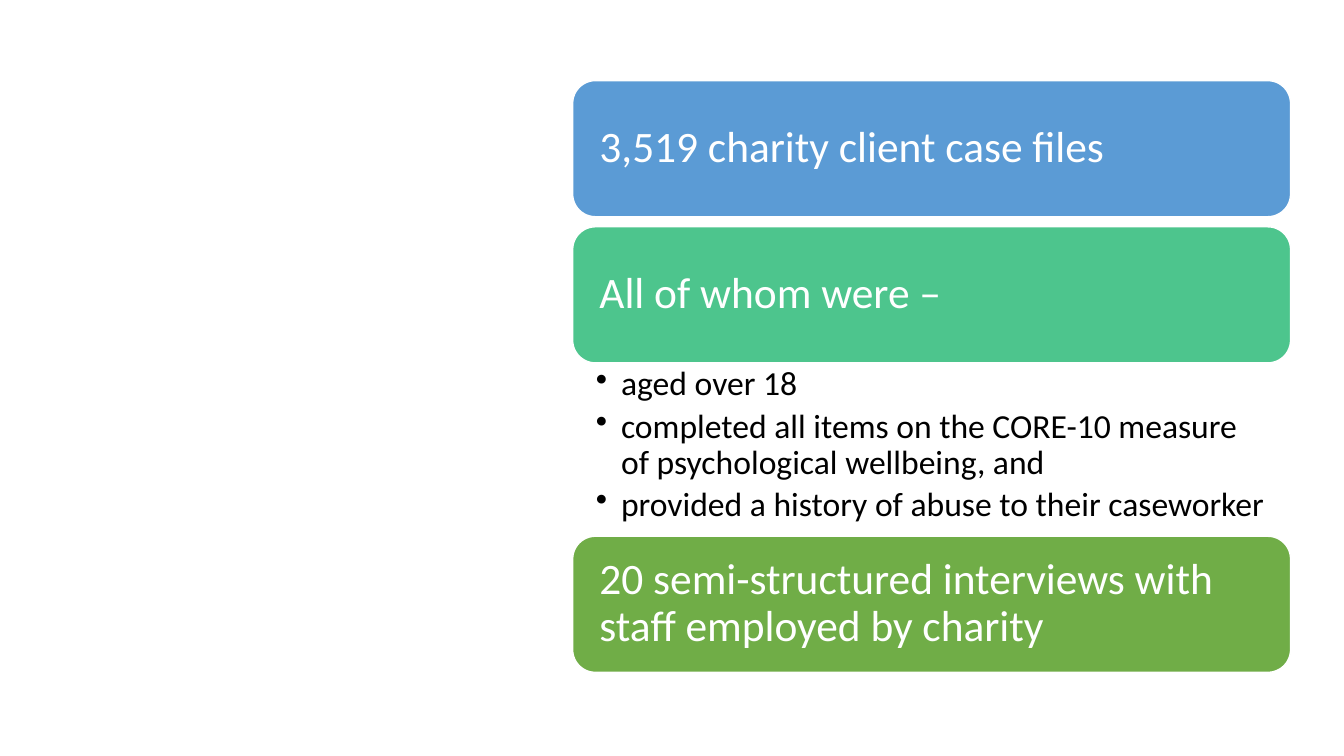
from dataclasses import dataclass

from lxml.etree import SubElement
from pptx import Presentation
from pptx.dml.color import RGBColor
from pptx.enum.shapes import MSO_SHAPE
from pptx.enum.text import MSO_ANCHOR, PP_ALIGN
from pptx.oxml.ns import qn
from pptx.slide import Slide
from pptx.text.text import TextFrame
from pptx.util import Inches, Pt


@dataclass(frozen=True)
class Theme:
    font: str = "Calibri"
    heading_size: float = 31
    bullet_size: float = 24
    white: str = "FFFFFF"
    black: str = "000000"
    blue: str = "5B9BD5"
    teal: str = "4DC58D"
    green: str = "70AD47"


@dataclass(frozen=True)
class Panel:
    text: str
    top: float
    fill: str


THEME = Theme()

# Column geometry, in inches
LEFT, WIDTH = 5.68, 7.12
PANEL_HEIGHT, BULLETS_HEIGHT = 1.35, 1.72
FIRST_TOP, PANEL_GAP = 0.8, 0.1
SECOND_TOP = FIRST_TOP + PANEL_HEIGHT + PANEL_GAP
BULLETS_TOP = SECOND_TOP + PANEL_HEIGHT
THIRD_TOP = BULLETS_TOP + BULLETS_HEIGHT

PANELS = [
    Panel("3,519 charity client case files", FIRST_TOP, THEME.blue),
    Panel("All of whom were –", SECOND_TOP, THEME.teal),
    Panel("20 semi-structured interviews with staff employed by charity", THIRD_TOP, THEME.green),
]
CRITERIA = [
    "aged over 18",
    "completed all items on the CORE-10 measure of psychological wellbeing, and",
    "provided a history of abuse to their caseworker",
]


def set_margins(frame: TextFrame, left: float, right: float, vertical: float) -> None:
    frame.word_wrap = True
    frame.margin_left, frame.margin_right = Inches(left), Inches(right)
    frame.margin_top = frame.margin_bottom = Inches(vertical)


def write_paragraph(frame: TextFrame, text: str, *, size: float, color: str,
                    first: bool = True, bullet: bool = False, space_after: float = 0) -> None:
    para = frame.paragraphs[0] if first else frame.add_paragraph()
    para.alignment = PP_ALIGN.LEFT
    para.line_spacing = 0.9
    para.space_after = Pt(space_after)
    if bullet:
        properties = para._p.get_or_add_pPr()
        properties.set("marL", str(Inches(0.25)))
        properties.set("indent", str(-Inches(0.25)))
        SubElement(properties, qn("a:buChar")).set("char", "•")
    span = para.add_run()
    span.text = text
    span.font.name = THEME.font
    span.font.size = Pt(size)
    span.font.color.rgb = RGBColor.from_string(color)


def draw_panel(page: Slide, panel: Panel) -> None:
    box = page.shapes.add_shape(MSO_SHAPE.ROUNDED_RECTANGLE, Inches(LEFT), Inches(panel.top),
                                Inches(WIDTH), Inches(PANEL_HEIGHT))
    box.shadow.inherit = False
    box.fill.solid()
    box.fill.fore_color.rgb = RGBColor.from_string(panel.fill)
    box.line.color.rgb = RGBColor.from_string(THEME.white)
    box.line.width = Pt(1)
    set_margins(box.text_frame, 0.2, 0.2, 0.2)
    box.text_frame.vertical_anchor = MSO_ANCHOR.MIDDLE
    write_paragraph(box.text_frame, panel.text, size=THEME.heading_size, color=THEME.white)


def draw_criteria(page: Slide, criteria: list[str]) -> None:
    box = page.shapes.add_textbox(Inches(LEFT), Inches(BULLETS_TOP),
                                  Inches(WIDTH), Inches(BULLETS_HEIGHT))
    set_margins(box.text_frame, 0.23, 0.24, 0.04)
    for index, text in enumerate(criteria):
        write_paragraph(box.text_frame, text, size=THEME.bullet_size, color=THEME.black,
                        first=index == 0, bullet=True, space_after=4.3)


def main() -> None:
    deck = Presentation()
    deck.slide_width, deck.slide_height = Inches(13.33), Inches(7.5)
    page = deck.slides.add_slide(deck.slide_layouts[6])

    # Coloured panels
    for panel in PANELS:
        draw_panel(page, panel)

    # Criteria under the second panel
    draw_criteria(page, CRITERIA)

    deck.save("out.pptx")


if __name__ == "__main__":
    main()
